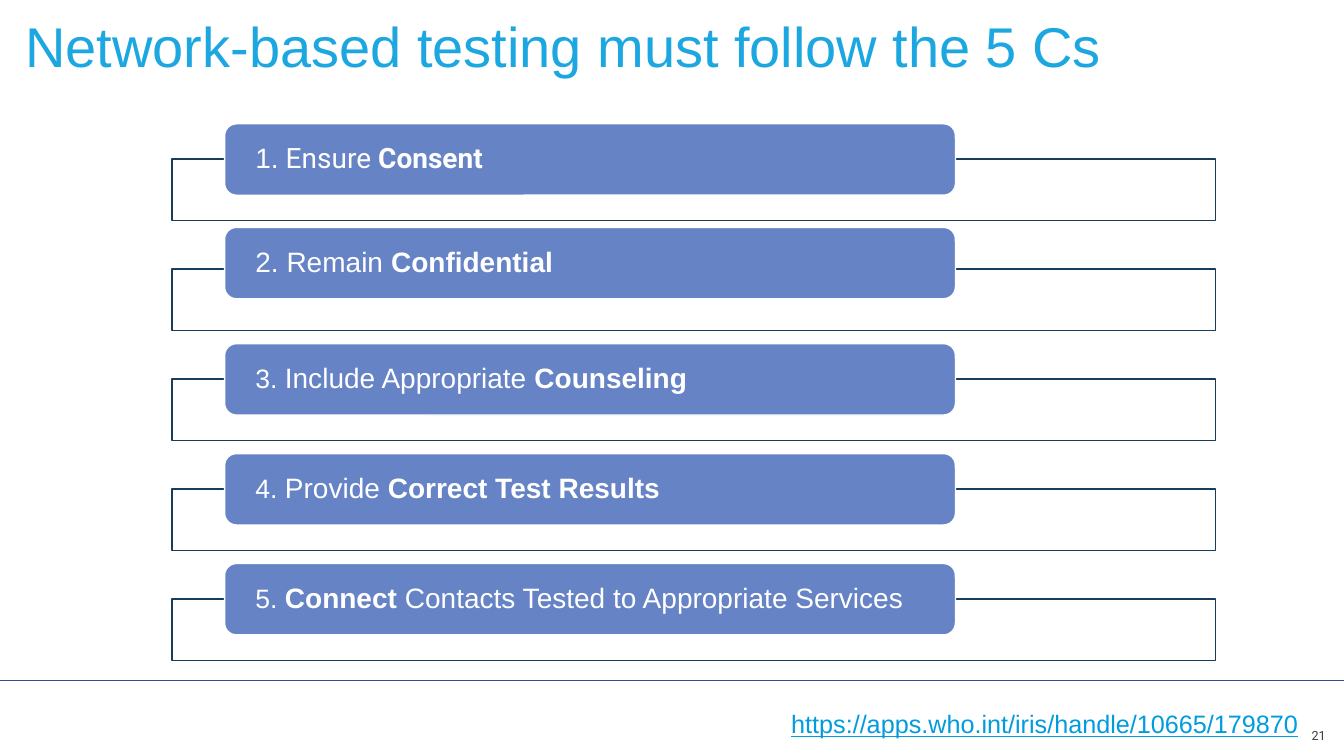
"""Build the slide on the five Cs of network-based testing."""
from lxml.etree import SubElement
from pptx import Presentation
from pptx.dml.color import RGBColor
from pptx.enum.shapes import MSO_CONNECTOR, MSO_SHAPE
from pptx.enum.text import MSO_ANCHOR, PP_ALIGN
from pptx.oxml.ns import qn
from pptx.util import Cm, Pt

WHITE = RGBColor(0xFF, 0xFF, 0xFF)
BLUE = RGBColor(0x66, 0x83, 0xC6)
NAVY = RGBColor(0x18, 0x3C, 0x5C)
RULE = RGBColor(0x2F, 0x52, 0x8F)
SKY = RGBColor(0x1D, 0xA7, 0xE0)
LINK = RGBColor(0x00, 0x9C, 0xDE)
GRAY = RGBColor(0x3D, 0x3D, 0x3D)

WIDTH, HEIGHT = 33.87, 19.05
FRAME_TOP, STEP, LIFT = 4.01, 2.77, 0.89

BOLD = {"bold": True}
SMALL = {"size": 19}
ROBOTO = {"font": "Roboto"}
ITEMS = [
    (0, [("1.", {}), (" Ensure ", ROBOTO), ("Consent", ROBOTO | BOLD)]),
    (0.16, [("2. Remain ", {}), ("Confidential", BOLD)]),
    (0, [("3. ", SMALL), ("Include Appropriate ", {}), ("Counseling", BOLD)]),
    (0, [("4. ", SMALL), ("Provide ", {}), ("Correct Test Results", BOLD)]),
    (0, [("5. ", SMALL), ("Connect", BOLD),
         (" Contacts Tested to Appropriate Services", {})]),
]


def add_run(para, text, size=20, font="Arial", color=WHITE, bold=False, under=False):
    run = para.add_run()
    run.text = text
    face = run.font
    face.size, face.name, face.bold = Pt(size), font, bold
    face.underline = under
    face.color.rgb = color


class Deck:
    def __init__(self):
        self.show = Presentation()
        self.show.slide_width, self.show.slide_height = Cm(WIDTH), Cm(HEIGHT)
        self.slide = self.show.slides.add_slide(self.show.slide_layouts[6])
        self.shapes = self.slide.shapes

    def block(self, kind, left, top, width, height, fill, line):
        shape = self.shapes.add_shape(kind, Cm(left), Cm(top), Cm(width), Cm(height))
        shape.shadow.inherit = False
        shape.fill.solid()
        shape.fill.fore_color.rgb = fill
        shape.line.color.rgb = line
        shape.line.width = Pt(1)
        return shape

    def frame(self, top):
        shape = self.block(MSO_SHAPE.RECTANGLE, 4.34, top, 26.29, 1.55, WHITE, NAVY)
        tint = shape.fill._xPr.find(qn("a:solidFill"))[0]
        SubElement(tint, qn("a:alpha"), val="90000")

    def pill(self, top, runs):
        shape = self.block(MSO_SHAPE.ROUNDED_RECTANGLE, 5.66, top, 18.42, 1.8, BLUE, WHITE)
        body = shape.text_frame
        body.word_wrap = True
        body.vertical_anchor = MSO_ANCHOR.MIDDLE
        body.margin_left = body.margin_right = Cm(0.69)
        body.margin_top = body.margin_bottom = 0
        para = body.paragraphs[0]
        para.alignment = PP_ALIGN.LEFT
        para.line_spacing = 0.9
        for text, style in runs:
            add_run(para, text, **style)

    def label(self, text, left, top, width, height, inset=(0.25, 0.13),
              align=PP_ALIGN.LEFT, anchor=MSO_ANCHOR.TOP, **style):
        box = self.shapes.add_textbox(Cm(left), Cm(top), Cm(width), Cm(height))
        body = box.text_frame
        body.word_wrap = True
        body.vertical_anchor = anchor
        body.margin_left = body.margin_right = Cm(inset[0])
        body.margin_top = body.margin_bottom = Cm(inset[1])
        para = body.paragraphs[0]
        para.alignment = align
        add_run(para, text, **style)

    def rule(self, top):
        line = self.shapes.add_connector(
            MSO_CONNECTOR.STRAIGHT, 0, Cm(top), Cm(WIDTH), Cm(top))
        line.line.color.rgb = RULE
        line.line.width = Pt(0.5)
        SubElement(line._element.spPr, qn("a:effectLst"))


def main():
    deck = Deck()
    deck.label("21", 32.03, 18.03, 1.63, 1.02, align=PP_ALIGN.RIGHT,
               anchor=MSO_ANCHOR.MIDDLE, size=9, font="Roboto", color=GRAY)
    deck.rule(17.15)
    for row, (rise, runs) in enumerate(ITEMS):
        top = FRAME_TOP + row * STEP
        deck.frame(top)
        deck.pill(top - LIFT - rise, runs)
    deck.label("Network-based testing must follow the 5 Cs", 0.64, 0.28, 32.49, 1.7,
               inset=(0, 0), size=40, color=SKY)
    deck.label("https://apps.who.int/iris/handle/10665/179870", 19.69, 17.73, 14.05, 1.02,
               size=18, color=LINK, under=True)
    deck.show.save("out.pptx")


if __name__ == "__main__":
    main()
